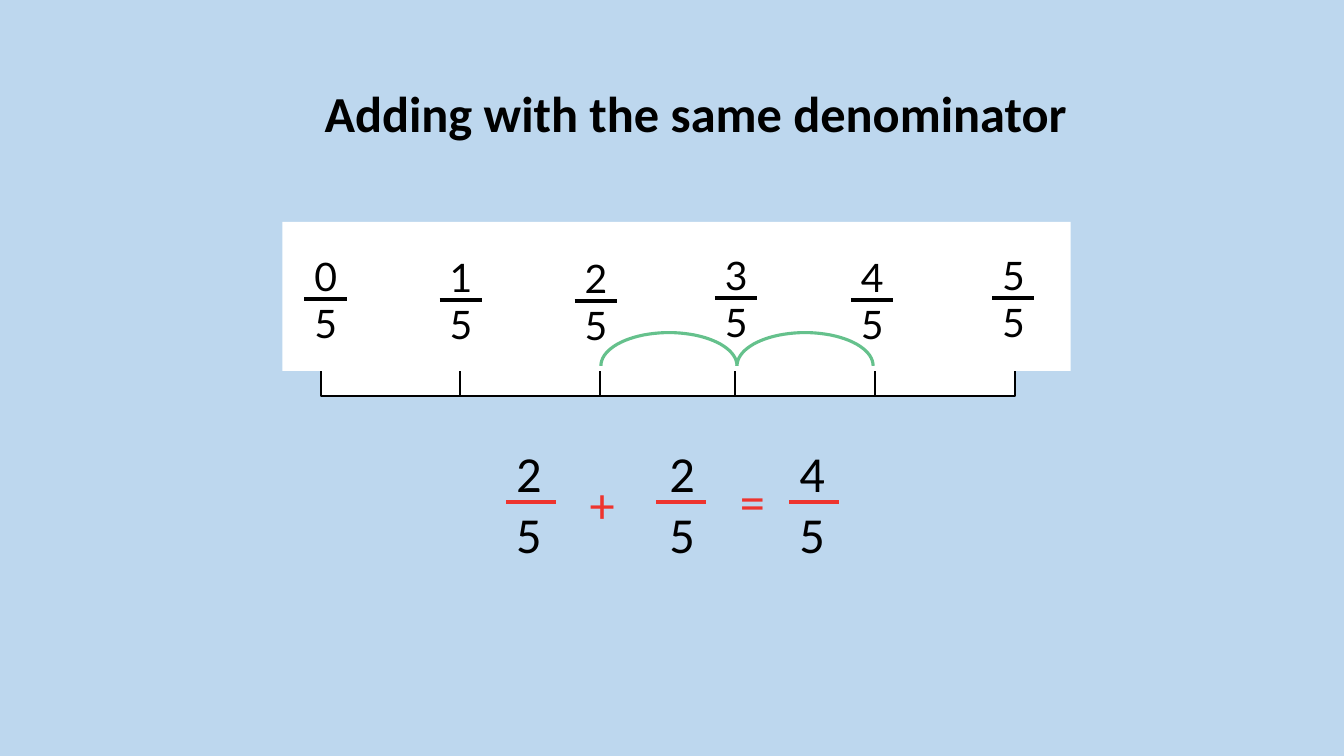
import math
from pptx import Presentation, util as u
from pptx.dml.color import RGBColor
from pptx.enum import shapes
from pptx.oxml.ns import qn
from lxml import etree

CELL = u.Inches(0.1)  # grid of 0.1 inch columns and rows
BLACK, WHITE, RED, GREEN, SKY = "000000", "FFFFFF", "EE342E", "65C18C", "BDD7EE"


def grid(*cells):
    return [u.Emu(round(c * CELL)) for c in cells]


def paint(fmt, color):
    """Fill a shape, background or font-like format with a hex colour."""
    fmt.solid()
    fmt.fore_color.rgb = RGBColor.from_string(color)


def style(sp, fill, line=None, width=1.5):
    sp.shadow.inherit = False
    paint(sp.fill, fill)
    if line:
        paint(sp.line.fill, line)
        sp.line.width = u.Pt(width)
    else:
        sp.line.fill.background()


def add_box(s, x, y, w, h, fill, line=None):
    sp = s.shapes.add_shape(shapes.MSO_SHAPE.RECTANGLE, *grid(x, y, w, h))
    style(sp, fill, line)


def add_text(s, box, lines, size, font, color=BLACK, bold=False, spacing=None):
    tf = s.shapes.add_textbox(*grid(*box)).text_frame
    tf.word_wrap = True
    tf.text = "\n".join(lines)
    for p in tf.paragraphs:
        p.line_spacing = spacing
        for r in p.runs:
            r.font.size, r.font.name, r.font.bold = u.Pt(size), font, bold
            paint(r.font.fill, color)


def add_fraction(s, box, top, bottom, size, font, bar, color, shift=0):
    """Two stacked digits with a bar; bar is (drop, length), shift moves it sideways."""
    x, y = box[:2]
    add_text(s, box, [top, bottom], size, font)
    drop, length = bar
    start = x + shift
    line = s.shapes.add_connector(shapes.MSO_CONNECTOR.STRAIGHT,
                                  *grid(start, y + drop, start + length, y + drop))
    paint(line.line.fill, color)
    line.line.width = u.Pt(3)
    etree.SubElement(line._element.spPr, qn("a:effectLst"))


def add_hop(s, x, y, w, h):
    """Half ellipse standing on the lower edge of its box."""
    steps = 40
    points = [grid(x + w / 2 * (1 - math.cos(a)), y + h * (1 - math.sin(a)))
              for a in (math.pi * i / steps for i in range(steps + 1))]
    fb = s.shapes.build_freeform(*points[0])
    fb.add_line_segments(points[1:], close=False)
    style(fb.convert_to_shape(), WHITE, GREEN, 2.25)


def number_line(s, x, y, w, h):
    # Five sections, showing below the panel as ticks and a base line
    for left in (3.8, 17.6, 31.5, 44.9, 58.8):
        add_box(s, x + left, y + 0.8, 13.9, 16.5, WHITE, BLACK)
    add_box(s, x, y, w, h, WHITE)
    # Labels in fifths
    labels = ((2.2, 2.5), (15.6, 2.6), (29, 2.7), (42.9, 2.4), (56.4, 2.6), (70.4, 2.4))
    for n, (left, top) in enumerate(labels):
        add_fraction(s, (x + left, y + top, 7.1, 10.4), str(n), "5",
                     28, "Lato", (5.2, 4.2), BLACK)
    # Two hops of one fifth
    for i in range(2):
        add_hop(s, x + 31.6 + 13.5 * i, y + 11, 13.5, 3.3)


def equation(s, x, y):
    for left, top, shift in ((0, "2", 0), (15.2, "2", -0.3), (28.1, "4", 0)):
        add_fraction(s, (x + left, y, 7.1, 13.1), top, "5",
                     36, "Calibri", (6.4, 4.9), RED, shift)
    for left, top, sign in ((7.3, 3, "+"), (22.2, 2.7, "=")):
        add_text(s, (x + left, y + top, 7.1, 7.1), [sign], 36, "Calibri", RED)


def main():
    prs = Presentation()
    prs.slide_width, prs.slide_height = u.Inches(13.33), u.Inches(7.5)
    s = prs.slides.add_slide(prs.slide_layouts[6])
    paint(s.background.fill, SKY)
    number_line(s, 28, 22, 78.2, 14.8)
    equation(s, 50.2, 43.4)
    # Title
    add_text(s, (31.2, 8.3, 76.1, 10.7), ["Adding with the same denominator"],
             36, "Calibri", bold=True, spacing=0.9)
    prs.save("out.pptx")


if __name__ == "__main__":
    main()
